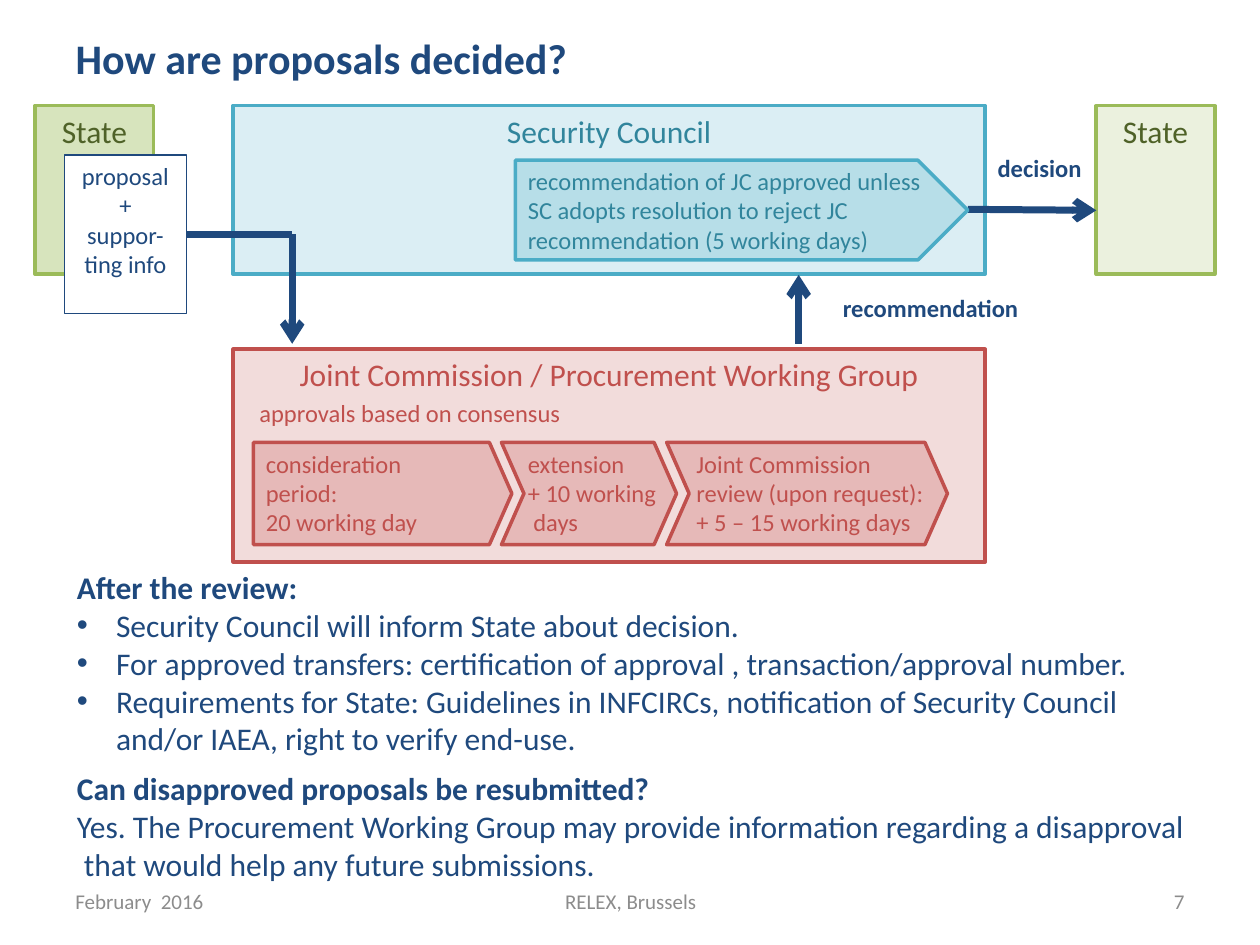
"""Build the slide on how procurement proposals are decided."""
from lxml.etree import SubElement
from pptx import Presentation
from pptx.dml.color import RGBColor
from pptx.enum.shapes import MSO_CONNECTOR, MSO_SHAPE
from pptx.enum.text import MSO_ANCHOR, PP_ALIGN
from pptx.oxml.ns import qn
from pptx.util import Cm, Pt

COLOURS = {
    "navy": "1F497D", "grey": "8C8C8C", "white": "FFFFFF",
    "red": "C0504D", "red_pale": "F2DCDB", "red_mid": "E6B9B8",
    "green": "9BBB59", "green_text": "4F6228", "green_pale": "EBF1DE", "green_mid": "D7E4BD",
    "teal": "4BACC6", "teal_text": "31859C", "teal_pale": "DBEEF4", "teal_mid": "B7DEE8",
}


def write(shape, text, size, colour, bold=False, align=PP_ALIGN.LEFT, anchor=MSO_ANCHOR.TOP, wrap=True):
    frame = shape.text_frame
    frame.text = text
    frame.word_wrap = wrap
    frame.vertical_anchor = anchor
    for paragraph in frame.paragraphs:
        paragraph.alignment = align
        for run in paragraph.runs:
            run.font.name = "Calibri"
            run.font.size = Pt(size)
            run.font.bold = bold
            run.font.color.rgb = RGBColor.from_string(COLOURS[colour])


def add_box(kind, left, top, width, height, fill, line, line_width=2):
    shape = slide.shapes.add_shape(kind, Cm(left), Cm(top), Cm(width), Cm(height))
    shape.shadow.inherit = False
    shape.fill.solid()
    shape.fill.fore_color.rgb = RGBColor.from_string(COLOURS[fill])
    shape.line.color.rgb = RGBColor.from_string(COLOURS[line])
    shape.line.width = Pt(line_width)
    return shape


presentation = Presentation()
presentation.slide_width = Cm(25.4)
presentation.slide_height = Cm(19.05)
slide = presentation.slides.add_slide(presentation.slide_layouts[5])

title = slide.shapes.title
title.left, title.top, title.width, title.height = Cm(1.27), Cm(0.53), Cm(22.86), Cm(1.6)
write(title, "How are proposals decided?", 24, "navy", bold=True)
title.text_frame.paragraphs[0].space_before = Pt(5)

footers = [
    (1.27, 5.92, "February  2016", PP_ALIGN.LEFT),
    (8.69, 8.05, "RELEX, Brussels", PP_ALIGN.CENTER),
    (18.21, 5.92, "7", PP_ALIGN.RIGHT),
]
for left, width, text, align in footers:
    footer = slide.shapes.add_textbox(Cm(left), Cm(17.65), Cm(width), Cm(1.02))
    write(footer, text, 12, "grey", align=align, anchor=MSO_ANCHOR.MIDDLE)

commission = add_box(MSO_SHAPE.RECTANGLE, 4.7, 7.04, 15.16, 4.29, "red_pale", "red")
write(commission, "Joint Commission / Procurement Working Group\napprovals based on consensus", 18, "red")
heading, note = commission.text_frame.paragraphs
heading.alignment = PP_ALIGN.CENTER
note.runs[0].font.size = Pt(14)
note._p.get_or_add_pPr().set("marL", str(Cm(0.28)))
note.space_before = Pt(3)

bodies = [
    (22.1, 2.39, "State", "green_pale", "green", "green_text"),
    (0.71, 2.39, "State", "green_mid", "green", "green_text"),
    (4.7, 15.16, "Security Council", "teal_pale", "teal", "teal_text"),
]
for left, width, text, fill, line, colour in bodies:
    body = add_box(MSO_SHAPE.RECTANGLE, left, 2.13, width, 3.4, fill, line)
    write(body, text, 18, colour, align=PP_ALIGN.CENTER)

proposal = add_box(MSO_SHAPE.RECTANGLE, 1.3, 3.12, 2.46, 3.2, "white", "navy", 1)
write(proposal, "proposal\n+\nsuppor-ting info", 14, "navy", align=PP_ALIGN.CENTER)

connections = [
    (3.76, 4.72, 5.89, 4.72, False),
    (5.89, 4.72, 5.89, 6.93, True),
    (19.51, 4.22, 22.1, 4.24, True),
    (16.1, 6.93, 16.1, 5.54, True),
]
for start_x, start_y, end_x, end_y, has_head in connections:
    connector = slide.shapes.add_connector(
        MSO_CONNECTOR.STRAIGHT, Cm(start_x), Cm(start_y), Cm(end_x), Cm(end_y))
    connector.line.color.rgb = RGBColor.from_string(COLOURS["navy"])
    connector.line.width = Pt(4)
    if has_head:
        SubElement(connector.line._get_or_add_ln(), qn("a:tailEnd"), type="arrow")
    SubElement(connector._element.spPr, qn("a:effectLst"))

for left, top, width, text in [(19.86, 2.97, 2.24, "decision"), (16.74, 5.79, 4.06, "recommendation")]:
    label = slide.shapes.add_textbox(Cm(left), Cm(top), Cm(width), Cm(0.86))
    write(label, text, 14, "navy", bold=True, wrap=False)

steps = [
    (MSO_SHAPE.CHEVRON, 10.11, 3.53, 10.39, 3.12, "extension\n+ 10 working\n days"),
    (MSO_SHAPE.PENTAGON, 5.11, 5.21, 5.11, 3.58, "consideration\nperiod:\n20 working day"),
    (MSO_SHAPE.CHEVRON, 13.44, 5.66, 13.79, 5.31,
     "Joint Commission\nreview (upon request):\n+ 5 – 15 working days"),
]
for kind, left, width, text_left, text_width, text in steps:
    step = add_box(kind, left, 8.92, width, 2.06, "red_mid", "red")
    step.adjustments[0] = 0.22
    label = slide.shapes.add_textbox(Cm(text_left), Cm(8.92), Cm(text_width), Cm(2.06))
    write(label, text, 14, "red", wrap=False)

approval = add_box(MSO_SHAPE.PENTAGON, 10.39, 3.23, 9.12, 2.01, "teal_mid", "teal")
write(approval, "recommendation of JC approved unless SC adopts resolution to reject JC "
      "recommendation (5 working days)", 14, "teal_text", anchor=MSO_ANCHOR.MIDDLE)

explanation = slide.shapes.add_textbox(Cm(1.3), Cm(11.33), Cm(23.19), Cm(7.44))
lines = [
    "After the review:",
    "Security Council will inform State about decision.",
    "For approved transfers: certification of approval , transaction/approval number.",
    "Requirements for State: Guidelines in INFCIRCs, notification of Security Council "
    "and/or IAEA, right to verify end-use.",
    "Can disapproved proposals be resubmitted?",
    "Yes. The Procurement Working Group may provide information regarding a disapproval",
    " that would help any future submissions.",
]
write(explanation, "\n".join(lines), 18, "navy")
paragraphs = explanation.text_frame.paragraphs
for question in (paragraphs[0], paragraphs[4]):
    question.runs[0].font.bold = True
paragraphs[4].space_before = Pt(7)
for paragraph in paragraphs[1:4]:
    properties = paragraph._p.get_or_add_pPr()
    properties.set("marL", str(Cm(0.79)))
    properties.set("indent", str(-Cm(0.79)))
    SubElement(properties, qn("a:buFont"), typeface="Arial")
    SubElement(properties, qn("a:buChar"), char="•")

presentation.save("out.pptx")
